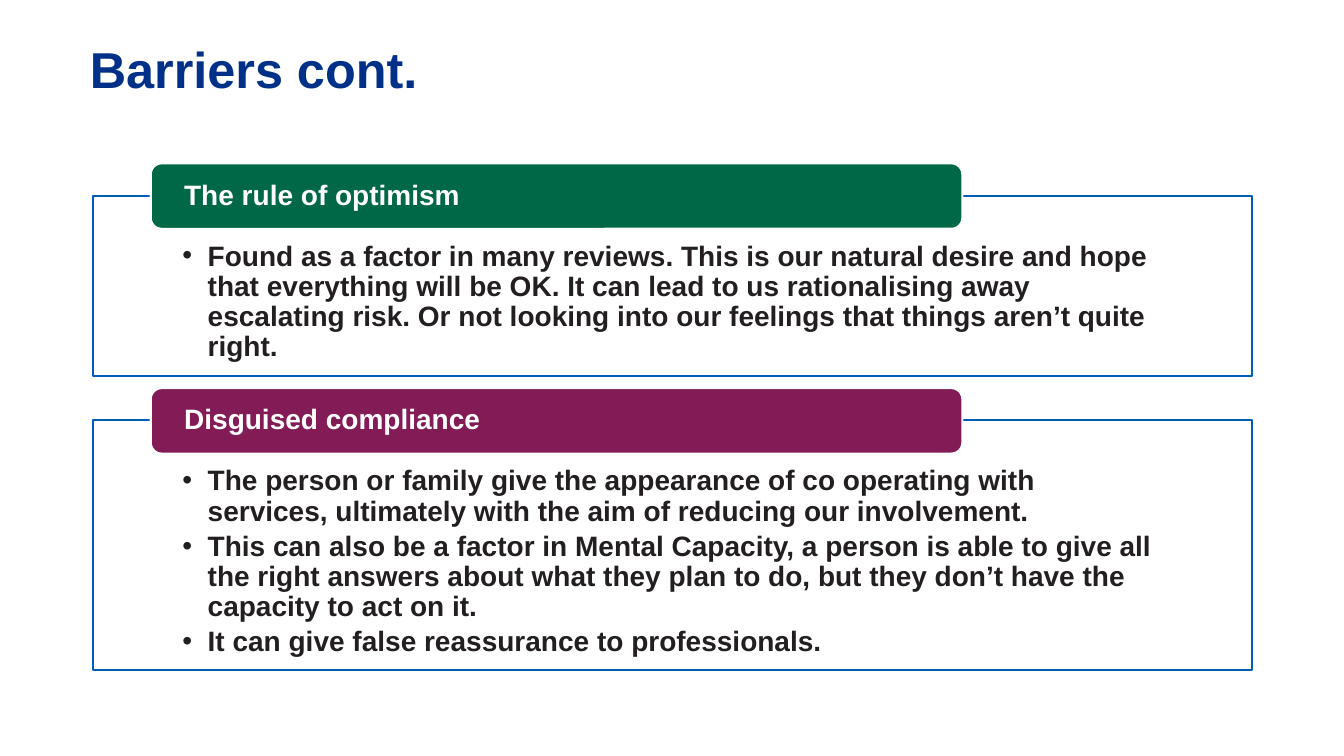
from lxml.etree import SubElement
from pptx import Presentation
from pptx.dml.color import RGBColor
from pptx.enum.shapes import MSO_SHAPE
from pptx.enum.text import MSO_ANCHOR, PP_ALIGN
from pptx.oxml.ns import qn
from pptx.util import Inches, Pt

NAVY = RGBColor(0x00, 0x30, 0x87)
BLUE = RGBColor(0x00, 0x5E, 0xB8)
GREEN = RGBColor(0x00, 0x67, 0x47)
PLUM = RGBColor(0x83, 0x1B, 0x56)
INK = RGBColor(0x23, 0x1F, 0x20)
WHITE = RGBColor(0xFF, 0xFF, 0xFF)

SLIDE_W, SLIDE_H = Inches(13.33), Inches(7.5)
PANEL_LEFT, PANEL_W = Inches(0.92), Inches(11.5)
HEADING_H = Inches(0.65)
HEADING_RISE = Inches(0.32)  # how far a heading stands above its panel

# Heading, heading colour, panel top and height, points
BARRIERS = [
    ("The rule of optimism", GREEN, Inches(1.94), Inches(1.79), [
        "Found as a factor in many reviews. This is our natural desire and hope that "
        "everything will be OK. It can lead to us rationalising away escalating risk. "
        "Or not looking into our feelings that things aren’t quite right.",
    ]),
    ("Disguised compliance", PLUM, Inches(4.17), Inches(2.48), [
        "The person or family give the appearance of co operating with services, "
        "ultimately with the aim of reducing our involvement.",
        "This can also be a factor in Mental Capacity, a person is able to give all the "
        "right answers about what they plan to do, but they don’t have the capacity to "
        "act on it.",
        "It can give false reassurance to professionals.",
    ]),
]


def write(paragraph, text, size, color):
    paragraph.alignment = PP_ALIGN.LEFT
    paragraph.line_spacing = 0.9
    run = paragraph.add_run()
    run.text = text
    run.font.name = "Arial"
    run.font.size = Pt(size)
    run.font.bold = True
    run.font.color.rgb = color


def add_bullet(paragraph):
    properties = paragraph._p.get_or_add_pPr()
    properties.set("marL", str(Inches(0.25)))
    properties.set("indent", str(-Inches(0.25)))
    SubElement(properties, qn("a:buFont"), typeface="Arial")
    SubElement(properties, qn("a:buChar"), char="•")


def set_insets(frame, side, top, bottom):
    frame.word_wrap = True
    frame.margin_left = frame.margin_right = side
    frame.margin_top, frame.margin_bottom = top, bottom


def add_box(slide, preset, box, fill, line):
    shape = slide.shapes.add_shape(preset, *box)
    shape.shadow.inherit = False
    shape.fill.solid()
    shape.fill.fore_color.rgb = fill
    shape.line.color.rgb = line
    shape.line.width = Pt(1.5)
    return shape


def add_title(slide, box, text):
    title = slide.shapes.title
    title.left, title.top, title.width, title.height = box
    title.text_frame.vertical_anchor = MSO_ANCHOR.TOP
    title.text_frame.word_wrap = True
    write(title.text_frame.paragraphs[0], text, 36, NAVY)


def add_barrier(slide, box, heading, color, points):
    left, top, width, height = box

    # Outlined panel with its points
    panel = add_box(slide, MSO_SHAPE.RECTANGLE, box, WHITE, BLUE)
    frame = panel.text_frame
    frame.vertical_anchor = MSO_ANCHOR.TOP
    set_insets(frame, Inches(0.89), Inches(0.46), Inches(0.16))
    for index, point in enumerate(points):
        paragraph = frame.add_paragraph() if index else frame.paragraphs[0]
        paragraph.space_after = Pt(3.5)
        add_bullet(paragraph)
        write(paragraph, point, 20, INK)

    # Heading straddling the panel's top edge
    heading_box = (left + int(width * 0.05), top - HEADING_RISE, int(width * 0.7), HEADING_H)
    tab = add_box(slide, MSO_SHAPE.ROUNDED_RECTANGLE, heading_box, color, WHITE)
    tab.text_frame.vertical_anchor = MSO_ANCHOR.MIDDLE
    set_insets(tab.text_frame, Inches(0.3), 0, 0)
    write(tab.text_frame.paragraphs[0], heading, 20, WHITE)


def main():
    deck = Presentation()
    deck.slide_width, deck.slide_height = SLIDE_W, SLIDE_H
    slide = deck.slides.add_slide(deck.slide_layouts[5])
    add_title(slide, (Inches(0.79), Inches(0.4), Inches(11.63), Inches(1.12)), "Barriers cont.")
    for heading, color, top, height, points in BARRIERS:
        add_barrier(slide, (PANEL_LEFT, top, PANEL_W, height), heading, color, points)
    deck.save("out.pptx")


if __name__ == "__main__":
    main()
